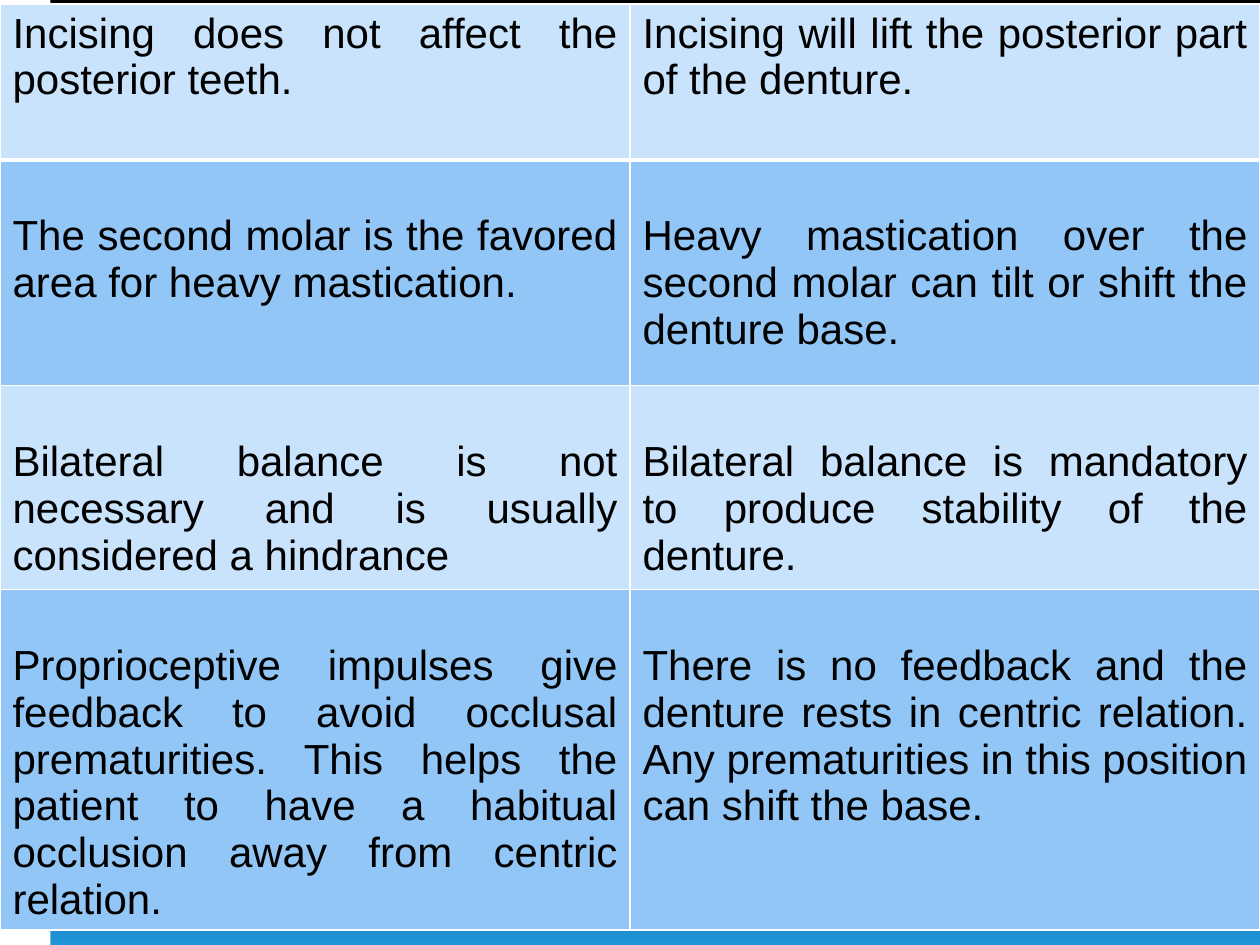
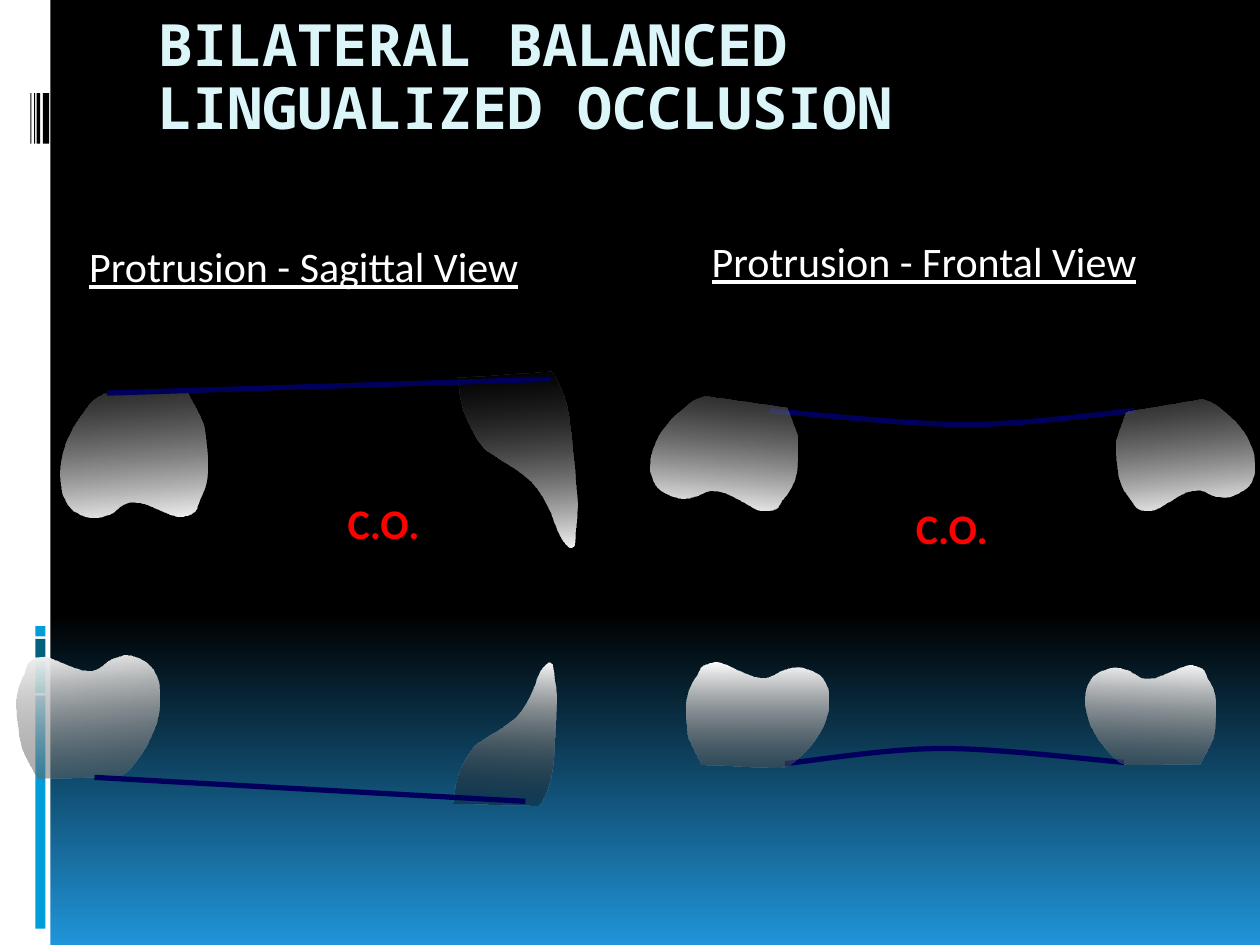
from math import cos, radians, sin

from lxml import etree
from pptx import Presentation
from pptx.dml.color import RGBColor
from pptx.enum.shapes import MSO_CONNECTOR, MSO_SHAPE
from pptx.enum.text import MSO_ANCHOR, MSO_AUTO_SIZE, PP_ALIGN
from pptx.oxml.ns import qn
from pptx.util import Inches, Pt

RECTANGLE = MSO_SHAPE.RECTANGLE
STRAIGHT = MSO_CONNECTOR.STRAIGHT
LEFT, JUSTIFY = PP_ALIGN.LEFT, PP_ALIGN.JUSTIFY
MIDDLE = MSO_ANCHOR.MIDDLE
NO_AUTOFIT = MSO_AUTO_SIZE.NONE
DOWNWARD = 270

COLORS = {
    "black": "000000", "white": "FFFFFF", "sky": "2095D9",
    "blue": "009DD9", "aqua": "0BD0D9", "teal": "04617B",
    "light_row": "C8E3FB", "dark_row": "91C6F7",
    "title": "DBF5F9", "red": "FF0000", "navy": "00005C", "gray": "515151",
}

FORMATS = {
    "cell": {"name": "Arial", "size": Pt(24), "color": "black"},
    "title": {"name": "Noto Sans Mono", "size": Pt(33.3), "bold": True, "color": "title"},
    "view": {"name": "Calibri", "size": Pt(24), "underline": True, "color": "white"},
    "occlusion": {"name": "Calibri", "size": Pt(24), "bold": True, "color": "red"},
}

# Gradient stops: position in percent, colour, opacity in percent
BACKGROUND_STOPS = [(0, "black", 100), (65, "black", 100), (100, "sky", 100)]
TOOTH_STOPS = {
    "molar": [(0, "gray", 47), (100, "white", 100)],
    "incisor": [(0, "black", 31), (100, "white", 100)],
}

# Left side decoration: left, top, width, height, colour
SIDE_BARS = [
    (0, 0, 0.4, 7.5, "white"),
    (0.28, 5.52, 0.08, 1.85, "blue"),
    (0.28, 5.25, 0.08, 0.25, "aqua"),
    (0.28, 5.07, 0.08, 0.15, "teal"),
    (0.28, 4.97, 0.08, 0.08, "blue"),
    (0.34, 0.74, 0.05, 0.4, "black"),
    (0.29, 0.74, 0.03, 0.4, "black"),
    (0.27, 0.74, 0.01, 0.4, "black"),
    (0.24, 0.74, 0.01, 0.4, "black"),
]

# Comparison table: row height, text top margin, natural teeth, denture
COMPARISON = [
    (1.24, 0.05, "Incising does not affect the posterior teeth.",
     "Incising will lift the posterior part of the denture."),
    (1.79, 0.42, "The second molar is the favored area for heavy mastication.",
     "Heavy mastication over the second molar can tilt or shift the denture base."),
    (1.62, 0.42, "Bilateral balance is not necessary and is usually considered a hindrance",
     "Bilateral balance is mandatory to produce stability of the denture."),
    (2.7, 0.42, "Proprioceptive impulses give feedback to avoid occlusal prematurities. "
     "This helps the patient to have a habitual occlusion away from centric relation.",
     "There is no feedback and the denture rests in centric relation. "
     "Any prematurities in this position can shift the base."),
]

TITLE = "BILATERAL BALANCED\vLINGUALIZED OCCLUSION"
LABELS = [
    ("Protrusion - Sagittal View", "view", (0.61, 1.86, 3.98, 0.5)),
    ("C.O.", "occlusion", (2.66, 3.9, 0.89, 0.5)),
    ("Protrusion - Frontal View", "view", (5.55, 1.82, 4.06, 0.5)),
    ("C.O.", "occlusion", (7.17, 3.94, 0.89, 0.5)),
]

# Tooth outlines run from one end of the neck, around the tip, to the other end
OUTLINES = {
    "molar": [
        (0.82, 3.13), (0.73, 3.19), (0.61, 3.35), (0.55, 3.46), (0.51, 3.56),
        (0.48, 3.71), (0.48, 3.81), (0.5, 3.93), (0.58, 4.05), (0.74, 4.11),
        (0.87, 4.08), (0.94, 4.03), (1.01, 3.99), (1.12, 3.99), (1.25, 4.04),
        (1.42, 4.1), (1.54, 4.06), (1.58, 3.97), (1.63, 3.85), (1.65, 3.69),
        (1.62, 3.41), (1.59, 3.32), (1.48, 3.11)],
    "incisor": [
        (3.63, 3), (3.69, 3.29), (3.82, 3.53), (3.92, 3.61), (4.03, 3.68),
        (4.16, 3.77), (4.26, 3.87), (4.35, 4.02), (4.43, 4.22), (4.47, 4.29),
        (4.52, 4.34), (4.55, 4.33), (4.56, 4.28), (4.58, 4.04), (4.58, 3.96),
        (4.51, 3.29), (4.42, 3.02), (4.37, 2.95)],
}
TIPS = {"molar": (1.42, 4.1), "incisor": (4.55, 4.33)}

# Parts from back to front with their rotation;
# a tooth is set by its neck start, neck end and tip
DIAGRAM = [
    ("molar", 355.3, [(0.82, 3.13), (1.48, 3.11), (1.42, 4.1)]),
    ("incisor", 355.3, [(3.63, 3), (4.37, 2.95), (4.55, 4.33)]),
    ("line", 0, [(0.85, 3.12), (4.37, 3.01)]),
    ("molar", 174.9, [(0.94, 6.16), (0.3, 6.18), (0.35, 5.21)]),
    ("incisor", 182.3, [(3.6, 6.37), (4.26, 6.39), (4.37, 5.27)]),
    ("line", 0, [(0.75, 6.17), (4.17, 6.36)]),
    ("arc", 0, [(6.11, 3.26), (7.67, 3.37), (9, 3.26)]),
    ("molar", 4.6, [(5.6, 3.15), (6.24, 3.24), (6.03, 4.05)]),
    ("molar", 354, [(9.54, 3.17), (8.94, 3.27), (9.15, 4.05)]),
    ("arc", 180, [(8.92, 6.05), (7.47, 5.94), (6.23, 6.06)]),
    ("molar", 180, [(6.2, 6.09), (5.57, 6.06), (5.7, 5.26)]),
    ("molar", 182.1, [(8.94, 6.07), (9.52, 6.06), (9.43, 5.28)]),
]


def rgb(color):
    return RGBColor.from_string(COLORS[color])


def apply_format(font, format_name):
    for attribute, value in FORMATS[format_name].items():
        if attribute == "color":
            font.color.rgb = rgb(value)
        else:
            setattr(font, attribute, value)


def set_gradient(fill, element, stops):
    fill.gradient()
    fill.gradient_angle = DOWNWARD
    stop_list = next(element.iter(qn("a:gsLst")))
    for stop in list(stop_list):
        stop_list.remove(stop)
    for position, color, opacity in stops:
        stop = etree.SubElement(stop_list, qn("a:gs"), pos=str(position * 1000))
        color_element = etree.SubElement(stop, qn("a:srgbClr"), val=COLORS[color])
        if opacity < 100:
            etree.SubElement(color_element, qn("a:alpha"), val=str(opacity * 1000))


def add_slide(presentation, layout_index):
    slide = presentation.slides.add_slide(presentation.slide_layouts[layout_index])
    for *box, color in SIDE_BARS:
        bar = slide.shapes.add_shape(RECTANGLE, *map(Inches, box))
        bar.shadow.inherit = False
        bar.fill.solid()
        bar.fill.fore_color.rgb = rgb(color)
        bar.line.fill.background()
    return slide


# Table
def set_borders(cell, bottom_width):
    properties = cell._tc.get_or_add_tcPr()
    for side, width in (("lnL", 1), ("lnR", 1), ("lnT", 1), ("lnB", bottom_width)):
        border = etree.SubElement(properties, qn(f"a:{side}"), w=str(Pt(width)))
        solid = etree.SubElement(border, qn("a:solidFill"))
        etree.SubElement(solid, qn("a:srgbClr"), val=COLORS["white"])


def add_comparison(slide):
    height = sum(row[0] for row in COMPARISON)
    table = slide.shapes.add_table(len(COMPARISON), 2, 0, Inches(0.03),
                                   Inches(10), Inches(height)).table
    table.first_row = table.horz_banding = False
    for index, (row_height, top_margin, *texts) in enumerate(COMPARISON):
        table.rows[index].height = Inches(row_height)
        for column, text in enumerate(texts):
            cell = table.cell(index, column)
            set_borders(cell, 1 if index else 3)
            cell.fill.solid()
            cell.fill.fore_color.rgb = rgb("dark_row" if index % 2 else "light_row")
            cell.margin_top = Inches(top_margin)
            cell.text = text
            paragraph = cell.text_frame.paragraphs[0]
            paragraph.alignment = JUSTIFY
            apply_format(paragraph.runs[0].font, "cell")


# Diagram geometry
def rotate(point, degrees):
    x, y = point
    cosine, sine = cos(radians(degrees)), sin(radians(degrees))
    return x * cosine - y * sine, x * sine + y * cosine


def bezier_points(knots):
    """Two control points and an end point for each smooth step between knots."""
    padded = [knots[0], *knots, knots[-1]]
    points = []
    for a, b, c, d in zip(padded, padded[1:], padded[2:], padded[3:]):
        points.append(tuple(q + (r - p) / 6 for p, q, r in zip(a, b, c)))
        points.append(tuple(q - (r - p) / 6 for p, q, r in zip(b, c, d)))
        points.append(c)
    return points


def fit_outline(kind, anchors):
    """Map the outline so that its neck ends and tip meet the anchors."""
    outline = OUTLINES[kind]
    (x0, y0), (x1, y1), (x2, y2) = outline[0], outline[-1], TIPS[kind]
    determinant = (x1 - x0) * (y2 - y0) - (x2 - x0) * (y1 - y0)
    fitted = []
    for x, y in outline:
        along = ((x - x0) * (y2 - y0) - (x2 - x0) * (y - y0)) / determinant
        toward = ((x1 - x0) * (y - y0) - (x - x0) * (y1 - y0)) / determinant
        fitted.append(tuple(start + along * (end - start) + toward * (tip - start)
                            for start, end, tip in zip(*anchors)))
    return fitted


def add_curve(slide, knots, rotation, close):
    knots = [rotate(knot, -rotation) for knot in knots]
    points = [tuple(map(Inches, point)) for point in [knots[0], *bezier_points(knots)]]
    builder = slide.shapes.build_freeform(*points[0])
    builder.add_line_segments(points[1:], close=close)
    curve = builder.convert_to_shape()
    curve.shadow.inherit = False

    # Join each three line points into one cubic curve
    lines = list(curve._element.iter(qn("a:lnTo")))
    for first, second, third in zip(lines[::3], lines[1::3], lines[2::3]):
        first.tag = qn("a:cubicBezTo")
        for line in (second, third):
            first.append(line[0])
            line.getparent().remove(line)

    # Turn the shape back around its own centre
    center = curve.left + curve.width / 2, curve.top + curve.height / 2
    x, y = rotate(center, rotation)
    curve.left, curve.top = round(x - curve.width / 2), round(y - curve.height / 2)
    curve.rotation = rotation
    return curve


def add_tooth(slide, kind, rotation, anchors):
    tooth = add_curve(slide, fit_outline(kind, anchors), rotation, True)
    set_gradient(tooth.fill, tooth._element, TOOTH_STOPS[kind])
    tooth.line.fill.background()


def add_occlusal_line(slide, kind, rotation, points):
    if kind == "arc":
        shape = add_curve(slide, points, rotation, False)
        shape.fill.background()
    else:
        ends = [Inches(value) for point in points for value in point]
        shape = slide.shapes.add_connector(STRAIGHT, *ends)
        etree.SubElement(shape._element.spPr, qn("a:effectLst"))
    shape.line.color.rgb = rgb("navy")
    shape.line.width = Pt(3)


def add_label(slide, text, format_name, box):
    label = slide.shapes.add_textbox(*map(Inches, box))
    label.text_frame.word_wrap = True
    label.text_frame.text = text
    apply_format(label.text_frame.paragraphs[0].runs[0].font, format_name)


def set_title(slide):
    title = slide.shapes.title
    title.left, title.top, title.width, title.height = map(Inches, (1.15, 0.08, 7.83, 1.09))
    frame = title.text_frame
    frame.text = TITLE
    frame.auto_size, frame.vertical_anchor = NO_AUTOFIT, MIDDLE
    paragraph = frame.paragraphs[0]
    paragraph.alignment, paragraph.line_spacing = LEFT, 0.9
    for run in paragraph.runs:
        apply_format(run.font, "title")


def main():
    presentation = Presentation()
    presentation.slide_width, presentation.slide_height = Inches(10), Inches(7.5)
    master = presentation.slide_master
    set_gradient(master.background.fill, master._element, BACKGROUND_STOPS)

    # Natural teeth and denture compared
    add_comparison(add_slide(presentation, 6))

    # Bilateral balanced occlusion
    slide = add_slide(presentation, 5)
    set_title(slide)
    for part in DIAGRAM:
        add_part = add_tooth if part[0] in OUTLINES else add_occlusal_line
        add_part(slide, *part)
    for label in LABELS:
        add_label(slide, *label)

    presentation.save("out.pptx")


if __name__ == "__main__":
    main()
